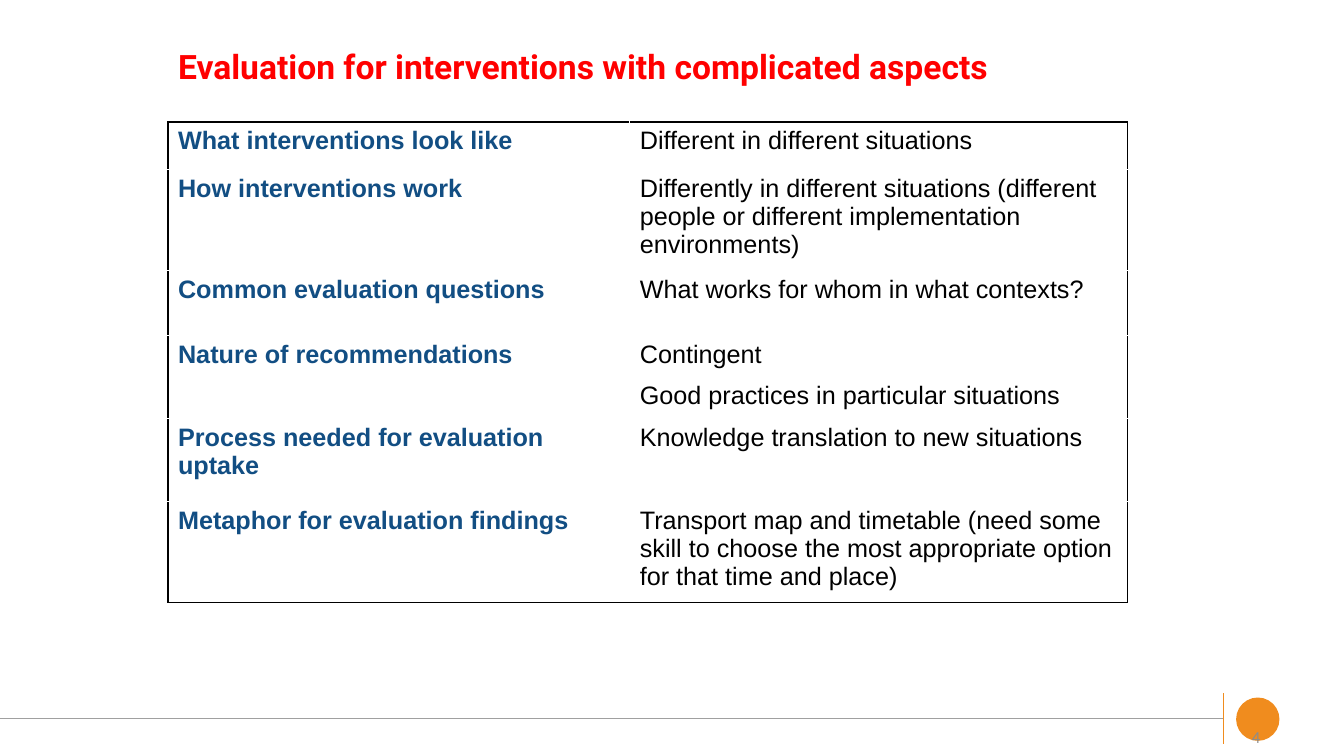
from dataclasses import dataclass

from lxml import etree
from pptx import Presentation
from pptx import util as u
from pptx.dml.color import RGBColor
from pptx.enum import shapes, text
from pptx.oxml import ns


@dataclass(frozen=True)
class Theme:
    title: str = "FF0000"
    label: str = "124E83"
    body: str = "000000"
    accent: str = "F08C1E"
    rule: str = "A0A0A0"
    number: str = "8C8C8C"
    head: int = 24
    main: int = 18
    small: int = 12


THEME = Theme()
WIDE, HIGH = 13.33, 7.5
COLS = (4.58, 4.94)
TALL = (0.47, 0.82, 0.65, 0.82, 0.82, 0.9)
ROWS = (
    ("What interventions look like", "Different in different situations"),
    ("How interventions work",
     "Differently in different situations (different people or different "
     "implementation environments)"),
    ("Common evaluation questions", "What works for whom in what contexts?"),
    ("Nature of recommendations",
     "Contingent\nGood practices in particular situations"),
    ("Process needed for evaluation uptake",
     "Knowledge translation to new situations"),
    ("Metaphor for evaluation findings",
     "Transport map and timetable (need some skill to choose the most "
     "appropriate option for that time and place)"),
)


def style(frame, face, size, color, bold=False):
    for para in frame.paragraphs:
        for run in para.runs:
            run.font.name = face
            run.font.size = u.Pt(size)
            run.font.bold = bold
            run.font.color.rgb = RGBColor.from_string(color)


def border(cell, sides):
    props = cell._tc.get_or_add_tcPr()
    for side in sides:
        line = etree.SubElement(props, ns.qn("a:ln" + side), w=str(u.Pt(1)))
        fill = etree.SubElement(line, ns.qn("a:solidFill"))
        etree.SubElement(fill, ns.qn("a:srgbClr"), val=THEME.body)


def title(slide, box):
    head = slide.shapes.title
    head.left, head.top, head.width, head.height = map(u.Inches, box)
    frame = head.text_frame
    frame.text = "Evaluation for interventions with complicated aspects"
    frame.vertical_anchor = text.MSO_ANCHOR.MIDDLE
    frame.paragraphs[0].alignment = text.PP_ALIGN.LEFT
    frame.paragraphs[0].line_spacing = 0.9
    style(frame, "Roboto", THEME.head, THEME.title, True)


def grid(slide, box):
    table = slide.shapes.add_table(
        len(ROWS), len(COLS), *map(u.Inches, box)).table
    table.first_row = table.horz_banding = False
    for col, wide in zip(table.columns, COLS):
        col.width = u.Inches(wide * box[2] / sum(COLS))
    for row, tall in zip(table.rows, TALL):
        row.height = u.Inches(tall * box[3] / sum(TALL))
    last = len(ROWS) - 1
    for r, words in enumerate(ROWS):
        for c, word in enumerate(words):
            cell = table.cell(r, c)
            side = "R" if c else "L"
            border(cell, side + "T" * (r == 0) + "B" * (r == last))
            cell.fill.background()
            cell.text_frame.text = word
            for para in cell.text_frame.paragraphs:
                para.space_before = u.Pt(THEME.main / 2)
            style(cell.text_frame, "Arial", THEME.main,
                  THEME.body if c else THEME.label, c == 0)


def rule(slide, ends, color):
    line = slide.shapes.add_connector(
        shapes.MSO_CONNECTOR.STRAIGHT, *map(u.Inches, ends))
    line.line.color.rgb = RGBColor.from_string(color)
    line.line.width = u.Pt(0.5)
    etree.SubElement(line._element.spPr, ns.qn("a:effectLst"))


def footer(slide, box):
    left, top, wide, tall = box
    edge, mid = left + wide * 0.91, top + tall / 2
    size = tall * 0.86
    dot = slide.shapes.add_shape(
        shapes.MSO_SHAPE.OVAL, u.Inches(edge + 0.13), u.Inches(top + 0.04),
        u.Inches(size), u.Inches(size))
    dot.shadow.inherit = False
    dot.fill.solid()
    dot.fill.fore_color.rgb = RGBColor.from_string(THEME.accent)
    dot.line.fill.background()
    rule(slide, (edge, top, edge, top + tall), THEME.accent)
    rule(slide, (left, mid, edge, mid), THEME.rule)
    page = slide.shapes.add_textbox(
        *map(u.Inches, (edge - 2.64, top + 0.31, 3.11, 0.24)))
    frame = page.text_frame
    frame.word_wrap = True
    frame.vertical_anchor = text.MSO_ANCHOR.MIDDLE
    frame.text = "4"
    frame.paragraphs[0].alignment = text.PP_ALIGN.RIGHT
    style(frame, "Calibri", THEME.small, THEME.number)


def main():
    deck = Presentation()
    deck.slide_width, deck.slide_height = u.Inches(WIDE), u.Inches(HIGH)
    slide = deck.slides.add_slide(deck.slide_layouts[5])
    left = WIDE / 8
    footer(slide, (0, 6.88, WIDE, 0.5))
    title(slide, (left, HIGH * 0.04, WIDE * 0.75, 0.77))
    grid(slide, (left, 1.21, sum(COLS), sum(TALL)))
    deck.save("out.pptx")


if __name__ == "__main__":
    main()
